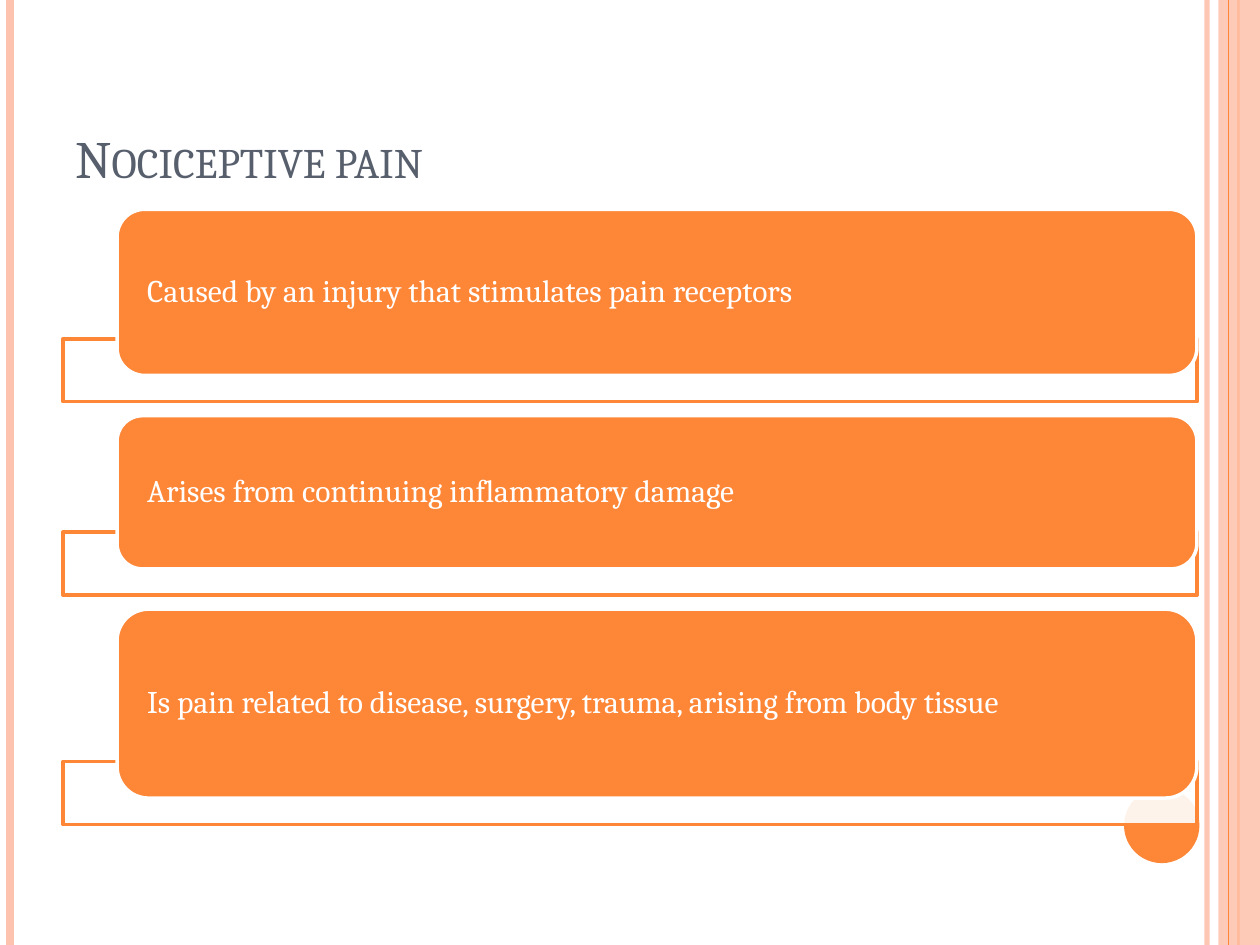
import lxml.etree
import pptx
import pptx.dml.color
import pptx.enum.shapes
import pptx.enum.text
import pptx.oxml.ns
import pptx.util

Cm, Pt = pptx.util.Cm, pptx.util.Pt
SHAPE = pptx.enum.shapes.MSO_SHAPE
ANCHOR = pptx.enum.text.MSO_ANCHOR
qn = pptx.oxml.ns.qn

TITLE = "Nociceptive pain"
# Text and height of each card
CARDS = [
    ("Caused by an injury that stimulates pain receptors", 3.35),
    ("Arises from continuing inflammatory damage", 3.09),
    ("Is pain related to disease, surgery, trauma, arising from body tissue", 3.81),
]
THEME = {
    "accent": "FE8637", "pale": "FEC3AE", "white": "FFFFFF", "title": "575F6D",
    "font": "Cambria", "title_size": 30, "card_size": 18,
}
SLIDE_WIDTH, SLIDE_HEIGHT = 25.4, 19.05
BAR_LEFT, BAR_WIDTH, BAR_HEIGHT = 1.27, 22.86, 1.27
CARD_LEFT, CARD_WIDTH, FIRST_TOP = 2.36, 21.77, 4.22
OVERLAP, GAP = 0.74, 0.28
TEXT_INSET = 0.61
CORNER_INSET = 0.049  # share of the height a rounded corner takes from the text area


def color(name):
    return pptx.dml.color.RGBColor.from_string(THEME[name])


def set_opacity(item, percent):
    """Make the solid colour of a shape's fill or a connector's line translucent."""
    fill = next(item._element.spPr.iter(qn("a:solidFill")))
    lxml.etree.SubElement(fill[0], qn("a:alpha"), val=str(percent * 1000))


def add_box(page, kind, left, top, width, height, fill, line=None, opacity=None):
    box = page.shapes.add_shape(kind, Cm(left), Cm(top), Cm(width), Cm(height))
    box.shadow.inherit = False
    box.fill.solid()
    box.fill.fore_color.rgb = color(fill)
    if opacity:
        set_opacity(box, opacity)
    if line:
        box.line.color.rgb = color(line)
        box.line.width = Pt(2)
    else:
        box.line.fill.background()
    return box


def add_stripe(page, x, name, width, opacity=None):
    stripe = page.shapes.add_connector(
        pptx.enum.shapes.MSO_CONNECTOR.STRAIGHT, Cm(x), 0, Cm(x), Cm(SLIDE_HEIGHT))
    stripe.line.color.rgb = color(name)
    stripe.line.width = Pt(width)
    if opacity:
        set_opacity(stripe, opacity)
    lxml.etree.SubElement(stripe._element.spPr, qn("a:effectLst"))


def write(box, text, size, name, anchor):
    frame = box.text_frame
    frame.word_wrap = True
    frame.vertical_anchor = anchor
    para = frame.paragraphs[0]
    para.alignment = pptx.enum.text.PP_ALIGN.LEFT
    span = para.add_run()
    span.text = text
    span.font.name = THEME["font"]
    span.font.size = Pt(THEME[size])
    span.font.color.rgb = color(name)
    return para


def add_frame(page):
    add_stripe(page, 24.33, "pale", 3, 93)
    add_stripe(page, 0.21, "pale", 4.5)
    add_stripe(page, 24.97, "accent", 1.5)
    add_box(page, SHAPE.RECTANGLE, 24.56, 0, 0.84, SLIDE_HEIGHT, "pale", opacity=87)
    add_stripe(page, 24.76, "accent", 0.75)
    add_box(page, SHAPE.OVAL, 22.66, 15.88, 1.52, 1.52, "accent")


def add_title(page):
    box = page.shapes.add_textbox(Cm(1.27), Cm(0.76), Cm(20.75), Cm(3.18))
    para = write(box, TITLE, "title_size", "title", ANCHOR.BOTTOM)
    para.runs[0].font._element.set("cap", "small")


def add_cards(page):
    top = FIRST_TOP
    for text, height in CARDS:
        bar_top = top + height - OVERLAP
        add_box(page, SHAPE.RECTANGLE, BAR_LEFT, bar_top, BAR_WIDTH, BAR_HEIGHT,
                "white", "accent", 90)
        card = add_box(page, SHAPE.ROUNDED_RECTANGLE, CARD_LEFT, top, CARD_WIDTH, height,
                       "accent", "white")
        para = write(card, text, "card_size", "white", ANCHOR.MIDDLE)
        para.line_spacing = 0.9
        frame = card.text_frame
        frame.margin_left = frame.margin_right = Cm(TEXT_INSET - CORNER_INSET * height)
        frame.margin_top = frame.margin_bottom = 0
        top = bar_top + BAR_HEIGHT + GAP


def main():
    deck = pptx.Presentation()
    deck.slide_width, deck.slide_height = Cm(SLIDE_WIDTH), Cm(SLIDE_HEIGHT)
    page = deck.slides.add_slide(deck.slide_layouts[6])
    add_frame(page)
    add_title(page)
    add_cards(page)
    deck.save("out.pptx")


if __name__ == "__main__":
    main()
